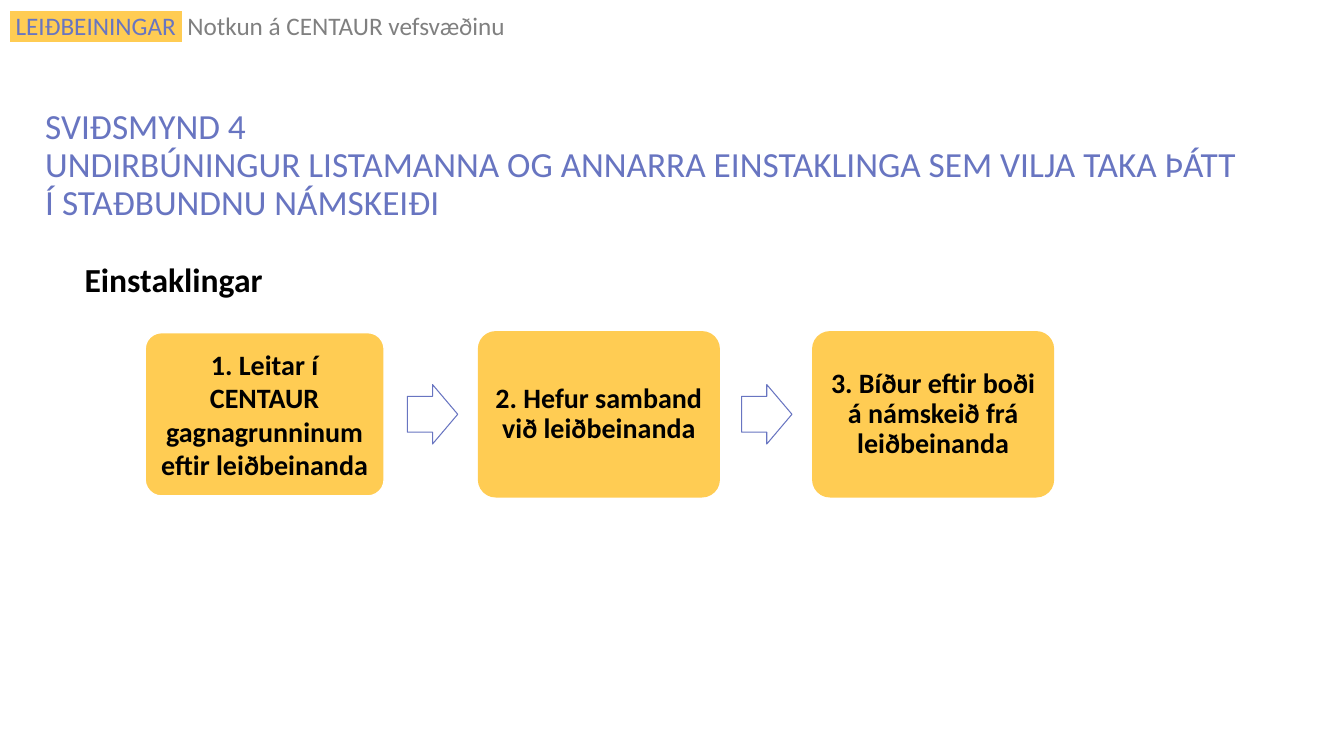
from lxml.etree import SubElement
from pptx import Presentation
from pptx.dml.color import RGBColor
from pptx.enum.shapes import MSO_SHAPE
from pptx.enum.text import MSO_ANCHOR, PP_ALIGN
from pptx.oxml.ns import qn
from pptx.util import Inches, Pt

COLORS = {
    "yellow": "FFCC53",
    "violet": "6875C1",
    "gray": "808080",
    "black": "000000",
    "white": "FFFFFF",
}
STEPS = [
    ("1. Leitar í CENTAUR gagnagrunninum eftir leiðbeinanda", "white", 1, 1.0),
    ("2. Hefur samband við leiðbeinanda", "yellow", 2.25, 0.9),
    ("3. Bíður eftir boði á námskeið frá leiðbeinanda", "yellow", 2.25, 0.9),
]
STEP_LEFT, STEP_PITCH, STEP_TOP = 1.44, 3.315, 3.3
STEP_WIDTH, STEP_HEIGHT = 2.37, 1.62
ARROW_OFFSET, ARROW_WIDTH, ARROW_HEIGHT = 2.6, 0.5, 0.59


def rgb(name):
    return RGBColor.from_string(COLORS[name])


def add_run(p, text, size=20, color="black", bold=False, highlight=None):
    r = p.add_run()
    r.text = text
    r.font.size = Pt(size)
    r.font.bold = bold
    r.font.color.rgb = rgb(color)
    if highlight:
        mark = SubElement(r.font._element, qn("a:highlight"))
        SubElement(mark, qn("a:srgbClr"), val=COLORS[highlight])
    r.font.name = "Calibri"


def write(tf, lines, align=PP_ALIGN.LEFT, anchor=MSO_ANCHOR.TOP, spacing=1.0, **font):
    tf.word_wrap = True
    tf.vertical_anchor = anchor
    p = tf.paragraphs[0]
    p.alignment = align
    p.line_spacing = spacing
    for i, line in enumerate(lines.split("\n")):
        if i:
            p.add_line_break()
        add_run(p, line, **font)
    return p


def add_text(s, left, top, width, height, text, **style):
    box = s.shapes.add_textbox(Inches(left), Inches(top), Inches(width), Inches(height))
    return write(box.text_frame, text, **style)


def add_shape(s, kind, left, top, width, height, adjustments, line, line_width, fill=None):
    sp = s.shapes.add_shape(kind, Inches(left), Inches(top), Inches(width), Inches(height))
    sp.shadow.inherit = False
    for i, value in enumerate(adjustments):
        sp.adjustments[i] = value
    if fill:
        sp.fill.solid()
        sp.fill.fore_color.rgb = rgb(fill)
    else:
        sp.fill.background()
    sp.line.color.rgb = rgb(line)
    sp.line.width = Pt(line_width)
    return sp


def add_step(s, left, text, line, line_width, spacing):
    sp = add_shape(s, MSO_SHAPE.ROUNDED_RECTANGLE, left, STEP_TOP, STEP_WIDTH, STEP_HEIGHT,
                   [0.1], line, line_width, fill="yellow")
    tf = sp.text_frame
    tf.margin_left = tf.margin_right = tf.margin_top = tf.margin_bottom = Inches(0.08)
    write(tf, text, align=PP_ALIGN.CENTER, anchor=MSO_ANCHOR.MIDDLE, spacing=spacing, bold=True)


def add_arrow(s, left):
    top = STEP_TOP + (STEP_HEIGHT - ARROW_HEIGHT) / 2
    add_shape(s, MSO_SHAPE.RIGHT_ARROW, left, top, ARROW_WIDTH, ARROW_HEIGHT,
              [0.6, 0.5], "violet", 0.75)


def main():
    prs = Presentation()
    prs.slide_width, prs.slide_height = Inches(13.33), Inches(7.5)
    s = prs.slides.add_slide(prs.slide_layouts[6])

    header = add_text(s, 0, 0.11, 9.52, 0.35, " LEIÐBEININGAR ", spacing=0.8,
                      size=18, color="violet", highlight="yellow")
    add_run(header, " Notkun á CENTAUR vefsvæðinu", size=18, color="gray")
    add_text(s, 0.35, 1.18, 12.1, 0.93,
             "SVIÐSMYND 4\nUNDIRBÚNINGUR LISTAMANNA OG ANNARRA EINSTAKLINGA "
             "SEM VILJA TAKA ÞÁTT Í STAÐBUNDNU NÁMSKEIÐI",
             anchor=MSO_ANCHOR.MIDDLE, spacing=0.9, size=25.2, color="violet")
    add_text(s, 0.74, 2.52, 6.69, 0.5, "Einstaklingar", size=24, bold=True)

    for i, step in enumerate(STEPS):
        left = STEP_LEFT + i * STEP_PITCH
        add_step(s, left, *step)
        if i < len(STEPS) - 1:
            add_arrow(s, left + ARROW_OFFSET)

    prs.save("out.pptx")


if __name__ == "__main__":
    main()
